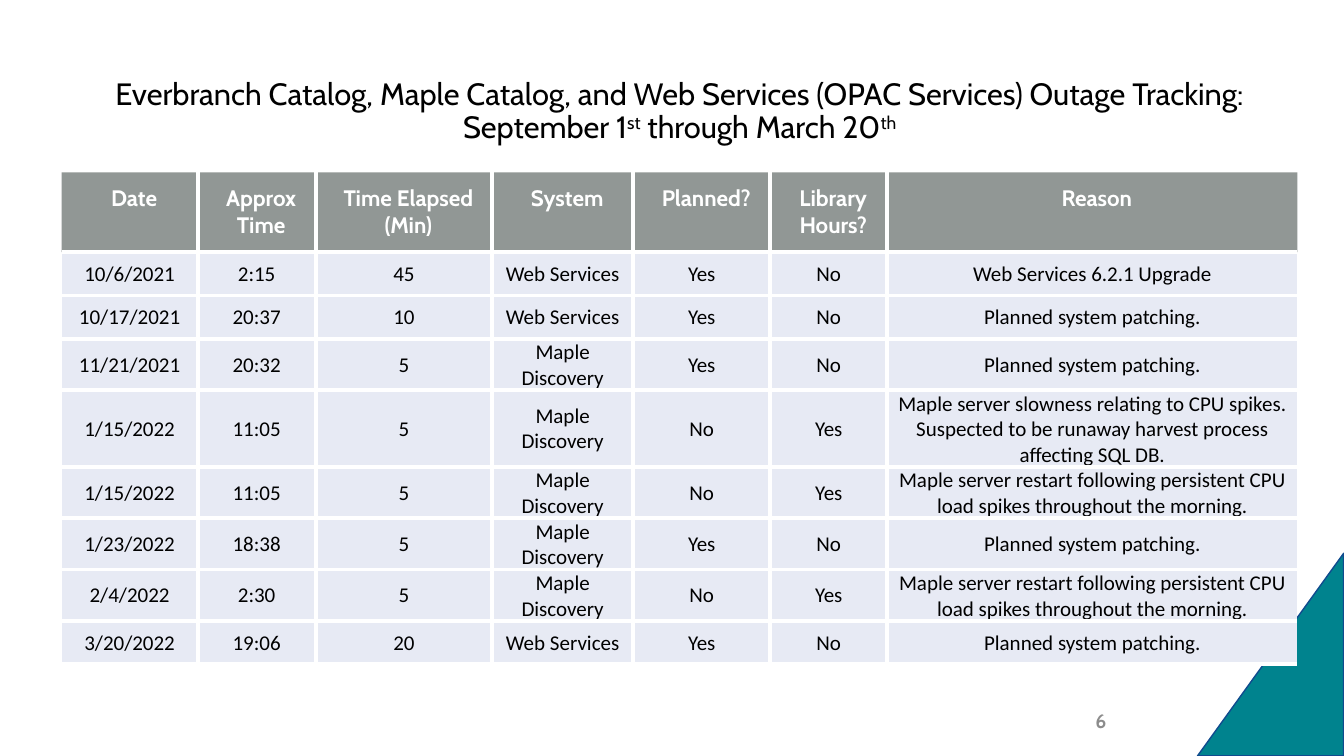
from typing import NamedTuple

from lxml import etree
from pptx import Presentation
from pptx import util as u
from pptx.dml.color import RGBColor
from pptx.enum import shapes, text
from pptx.oxml.ns import qn

SLIDE_WIDTH, SLIDE_HEIGHT = u.Inches(13.33), u.Inches(7.5)
COLUMN, ROW = SLIDE_WIDTH / 100, SLIDE_HEIGHT / 100  # grid of 100 by 100
WHITE, BLACK = "FFFFFF", "000000"


class Box(NamedTuple):
    left: float
    top: float
    width: float
    height: float

    def lengths(self) -> tuple[int, int, int, int]:
        return (columns(self.left), rows(self.top),
                columns(self.width), rows(self.height))


class Style(NamedTuple):
    font: str
    size: float
    color: str
    bold: bool = False


class CellStyle(NamedTuple):
    style: Style
    fill: str
    opacity: int
    anchor: text.MSO_ANCHOR
    insets: tuple[float, float, float, float]  # left, top, right, bottom


class Outage(NamedTuple):
    date: str
    time: str
    minutes: str
    system: str
    planned: str
    library_hours: str
    reason: str


TITLE = Style("Cabin", 22, BLACK)
PAGE_NUMBER = Style("Cabin", 14, "8C8C8C", True)
# Insets are shares of a grid column or row
HEADER = CellStyle(Style("Cabin", 16, WHITE, True), "636B68", 70,
                   text.MSO_ANCHOR.TOP, (1.65, 1.73, 0.98, 1.73))
BODY = CellStyle(Style("Calibri", 15, BLACK), "E7EAF4", 100,
                 text.MSO_ANCHOR.MIDDLE, (0.08, 0.13, 0.08, 0))

COLUMN_WIDTHS = (10.13, 8.78, 13.13, 10.5, 10.2, 8.7, 30.53)
HEADER_HEIGHT, BODY_HEIGHT = 9.73, 5.73
HEADINGS = Outage("Date", "Approx Time", "Time Elapsed (Min)", "System",
                  "Planned?", "Library Hours?", "Reason")
WEB, DISCOVERY = "Web Services", "Maple Discovery"
PATCHING = "Planned system patching."
RESTART = ("Maple server restart following persistent CPU load spikes "
           "throughout the morning.")
SLOWNESS = ("Maple server slowness relating to CPU spikes. Suspected to be "
            "runaway harvest process affecting SQL DB.")
OUTAGES = (
    Outage("10/6/2021", "2:15", "45", WEB, "Yes", "No", "Web Services 6.2.1 Upgrade"),
    Outage("10/17/2021", "20:37", "10", WEB, "Yes", "No", PATCHING),
    Outage("11/21/2021", "20:32", "5", DISCOVERY, "Yes", "No", PATCHING),
    Outage("1/15/2022", "11:05", "5", DISCOVERY, "No", "Yes", SLOWNESS),
    Outage("1/15/2022", "11:05", "5", DISCOVERY, "No", "Yes", RESTART),
    Outage("1/23/2022", "18:38", "5", DISCOVERY, "Yes", "No", PATCHING),
    Outage("2/4/2022", "2:30", "5", DISCOVERY, "No", "Yes", RESTART),
    Outage("3/20/2022", "19:06", "20", WEB, "Yes", "No", PATCHING),
)


def columns(count: float) -> int:
    return round(count * COLUMN)


def rows(count: float) -> int:
    return round(count * ROW)


def paint(target, color: str) -> None:
    """Color a fill, a line's fill or a font's fill."""
    target.solid()
    target.fore_color.rgb = RGBColor.from_string(color)


def add_run(paragraph, words: str, style: Style, superscript: bool = False) -> None:
    run = paragraph.add_run()
    run.text = words
    run.font.name, run.font.size = style.font, u.Pt(style.size)
    run.font.bold = style.bold
    paint(run.font.fill, style.color)
    if superscript:
        run.font._element.set("baseline", "30000")


def add_centered_box(slide, box: Box):
    frame = slide.shapes.add_textbox(*box.lengths()).text_frame
    frame.word_wrap = True
    frame.vertical_anchor = text.MSO_ANCHOR.MIDDLE
    paragraph = frame.paragraphs[0]
    paragraph.alignment = text.PP_ALIGN.CENTER
    return paragraph


def add_corner(slide) -> None:
    shape = slide.shapes.add_shape(shapes.MSO_SHAPE.RIGHT_TRIANGLE,
                                   *Box(87, 76.93, 15.08, 19.33).lengths())
    shape.shadow.inherit = False
    shape.rotation = 90
    transform = shape._element.spPr.find(qn("a:xfrm"))
    for flip in ("flipH", "flipV"):
        transform.set(flip, "1")
    paint(shape.fill, "00838E")
    paint(shape.line.fill, "104B8E")
    shape.line.width = u.Pt(1)


def add_title(slide) -> None:
    paragraph = add_centered_box(slide, Box(4.58, 9.43, 91.97, 10.8))
    paragraph.line_spacing = 0.9
    add_run(paragraph, "Everbranch Catalog, Maple Catalog, and Web Services "
                       "(OPAC Services) Outage Tracking:", TITLE)
    paragraph.add_line_break()
    for words, superscript in (("September 1", False), ("st", True),
                               (" through March 20", False), ("th", True)):
        add_run(paragraph, words, TITLE, superscript)


def add_page_number(slide) -> None:
    paragraph = add_centered_box(slide, Box(70.67, 92.67, 22.5, 5.33))
    paragraph.space_after = u.Pt(6)
    add_run(paragraph, "6", PAGE_NUMBER)


def add_borders(properties, color: str, width: float, open_sides: set[str]) -> None:
    # Border elements come before the fill, in this order
    for index, side in enumerate(("lnL", "lnR", "lnT", "lnB")):
        line = etree.Element(qn(f"a:{side}"), w=str(u.Pt(width)))
        if side in open_sides:
            etree.SubElement(line, qn("a:noFill"))
        else:
            fill = etree.SubElement(line, qn("a:solidFill"))
            etree.SubElement(fill, qn("a:srgbClr"), val=color)
        properties.insert(index, line)


def fill_cell(cell, words: str, look: CellStyle, open_sides: set[str]) -> None:
    left, top, right, bottom = look.insets
    cell.margin_left, cell.margin_right = columns(left), columns(right)
    cell.margin_top, cell.margin_bottom = rows(top), rows(bottom)
    cell.vertical_anchor = look.anchor
    paint(cell.fill, look.fill)
    properties = cell._tc.tcPr
    if look.opacity < 100:
        color = properties.find(f".//{qn('a:srgbClr')}")
        etree.SubElement(color, qn("a:alpha"), val=str(look.opacity * 1000))
    add_borders(properties, WHITE, 3, open_sides)
    paragraph = cell.text_frame.paragraphs[0]
    paragraph.alignment = text.PP_ALIGN.CENTER
    add_run(paragraph, words, look.style)


def add_outage_table(slide) -> None:
    height = HEADER_HEIGHT + BODY_HEIGHT * len(OUTAGES)
    box = Box(4.58, 22.8, sum(COLUMN_WIDTHS), height)
    table = slide.shapes.add_table(len(OUTAGES) + 1, len(COLUMN_WIDTHS),
                                   *box.lengths()).table
    table.horz_banding = False
    for column, width in zip(table.columns, COLUMN_WIDTHS):
        column.width = columns(width)
    last = len(COLUMN_WIDTHS) - 1
    for index, outage in enumerate((HEADINGS, *OUTAGES)):
        row, look = table.rows[index], BODY if index else HEADER
        row.height = rows(BODY_HEIGHT if index else HEADER_HEIGHT)
        for place, (cell, words) in enumerate(zip(row.cells, outage)):
            # The table's left, right and top edges have no line
            edges = {"lnL": place == 0, "lnR": place == last, "lnT": index == 0}
            fill_cell(cell, words, look, {side for side in edges if edges[side]})


def main() -> None:
    presentation = Presentation()
    presentation.slide_width, presentation.slide_height = SLIDE_WIDTH, SLIDE_HEIGHT
    slide = presentation.slides.add_slide(presentation.slide_layouts[6])
    add_corner(slide)
    add_title(slide)
    add_page_number(slide)
    add_outage_table(slide)
    presentation.save("out.pptx")


if __name__ == "__main__":
    main()
